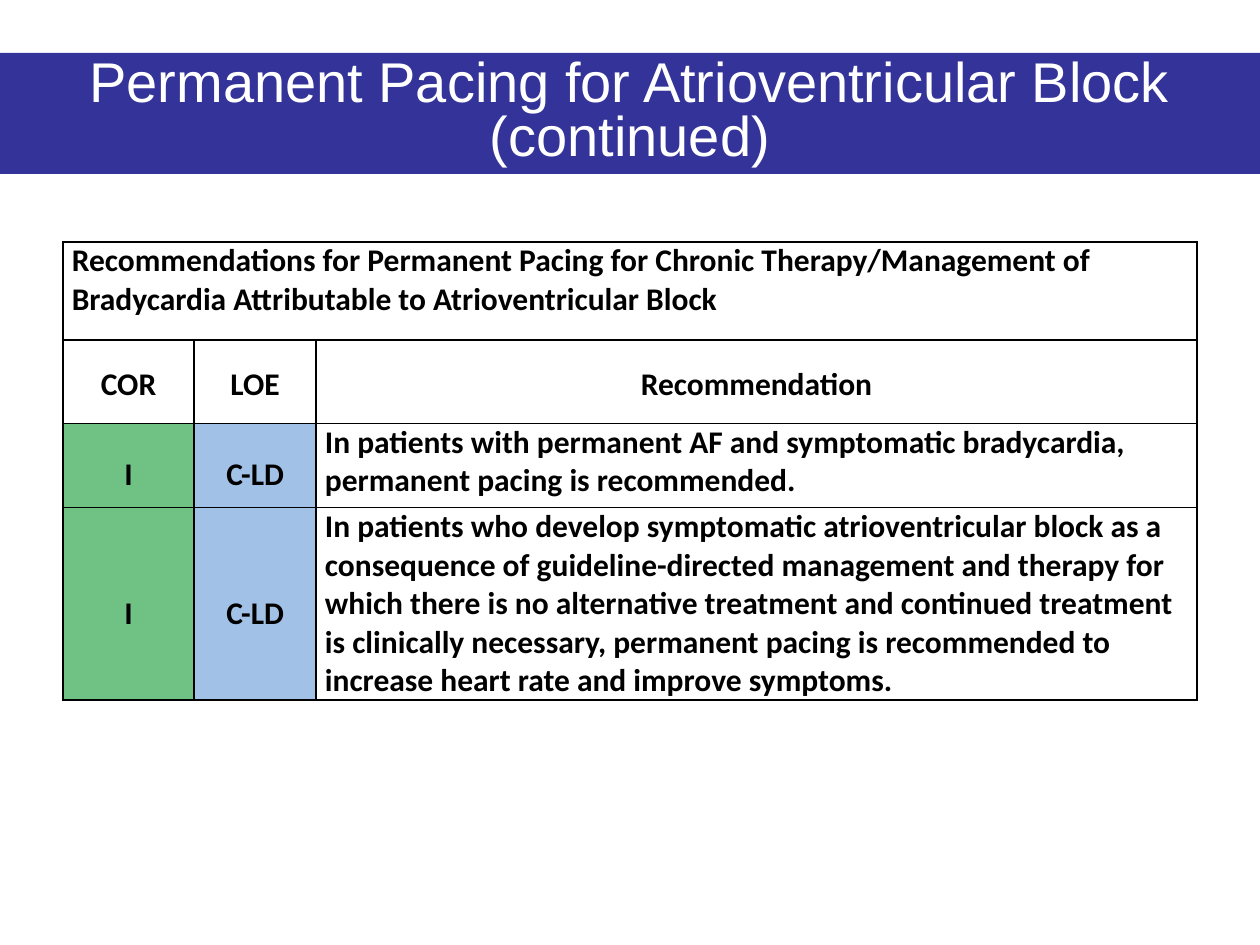
from pptx import Presentation
from pptx.dml.color import RGBColor
from pptx.enum.text import MSO_ANCHOR as Anchor, MSO_AUTO_SIZE as AutoSize, PP_ALIGN as Align
from pptx.oxml.ns import qn
from pptx.util import Inches, Pt
from lxml.etree import SubElement

COLORS = {
    "band": "333399",
    "white": "FFFFFF",
    "ink": "000000",
    "strong": "6FC284",
    "evidence": "A1C1E7",
}
TITLE = "Permanent Pacing for Atrioventricular Block (continued)"
CAPTION = (
    "Recommendations for Permanent Pacing for Chronic Therapy/Management of "
    "Bradycardia Attributable to Atrioventricular Block"
)
HEADINGS = ["COR", "LOE", "Recommendation"]
RECOMMENDATIONS = [
    ("I", "C-LD",
     "In patients with permanent AF and symptomatic bradycardia, "
     "permanent pacing is recommended."),
    ("I", "C-LD",
     "In patients who develop symptomatic atrioventricular block as a "
     "consequence of guideline-directed management and therapy for which "
     "there is no alternative treatment and continued treatment is clinically "
     "necessary, permanent pacing is recommended to increase heart rate and "
     "improve symptoms."),
]
COLUMN_WIDTHS = [1.04, 0.97, 6.99]
ROW_HEIGHTS = [0.78, 0.66, 0.67, 1.5]


class SlideBuilder:
    title_font, title_size = "Arial", 32
    table_font, table_size = "Calibri", 18

    def __init__(self, slide):
        self.slide = slide

    def color(self, name):
        return RGBColor.from_string(COLORS[name])

    def add_text(self, paragraph, text, font_name, size, color, bold):
        run = paragraph.add_run()
        run.text = text
        run.font.name = font_name
        run.font.size = Pt(size)
        run.font.bold = bold
        run.font.color.rgb = self.color(color)

    def title(self, text, left, top, width, height):
        band = self.slide.shapes.title
        band.left, band.top = Inches(left), Inches(top)
        band.width, band.height = Inches(width), Inches(height)
        band.fill.solid()
        band.fill.fore_color.rgb = self.color("band")
        frame = band.text_frame
        frame.word_wrap = True
        frame.auto_size = AutoSize.NONE
        frame.vertical_anchor = Anchor.MIDDLE
        heading = frame.paragraphs[0]
        heading.alignment = Align.CENTER
        heading.line_spacing = 0.8
        self.add_text(heading, text, self.title_font, self.title_size, "white", False)

    def table(self, left, top, widths, heights):
        frame = self.slide.shapes.add_table(
            len(heights), len(widths), Inches(left), Inches(top),
            Inches(sum(widths)), Inches(sum(heights)))
        grid = frame.table
        grid.first_row = grid.horz_banding = False
        for column, width in zip(grid.columns, widths):
            column.width = Inches(width)
        for row, height in zip(grid.rows, heights):
            row.height = Inches(height)
        for cell in grid.iter_cells():
            self.borders(cell)
            cell.fill.background()
            cell.margin_left = cell.margin_right = Inches(0.07)
            cell.margin_top = cell.margin_bottom = 0
        return grid

    def borders(self, cell):
        properties = cell._tc.get_or_add_tcPr()
        for side in ("a:lnL", "a:lnR", "a:lnT", "a:lnB"):
            line = SubElement(properties, qn(side), w=str(Pt(1)))
            paint = SubElement(line, qn("a:solidFill"))
            SubElement(paint, qn("a:srgbClr"), val=COLORS["ink"])

    def cell(self, cell, text, centered_spacing=None, fill=None):
        paragraph = cell.text_frame.paragraphs[0]
        if centered_spacing:
            cell.vertical_anchor = Anchor.MIDDLE
            paragraph.alignment = Align.CENTER
            paragraph.line_spacing = centered_spacing
        if fill:
            cell.fill.solid()
            cell.fill.fore_color.rgb = self.color(fill)
        self.add_text(paragraph, text, self.table_font, self.table_size, "ink", True)


def main():
    deck = Presentation()
    deck.slide_width, deck.slide_height = Inches(10), Inches(7.5)
    builder = SlideBuilder(deck.slides.add_slide(deck.slide_layouts[5]))
    builder.title(TITLE, 0, 0.42, 10, 0.96)

    guideline = builder.table(0.5, 1.92, COLUMN_WIDTHS, ROW_HEIGHTS)
    guideline.cell(0, 0).merge(guideline.cell(0, 2))
    builder.cell(guideline.cell(0, 0), CAPTION)
    for column, heading in enumerate(HEADINGS):
        builder.cell(guideline.cell(1, column), heading, 1.15)
    for row, (strength, evidence, advice) in enumerate(RECOMMENDATIONS, start=2):
        builder.cell(guideline.cell(row, 0), strength, 1.5, "strong")
        builder.cell(guideline.cell(row, 1), evidence, 1.5, "evidence")
        builder.cell(guideline.cell(row, 2), advice)

    deck.save("out.pptx")


if __name__ == "__main__":
    main()
